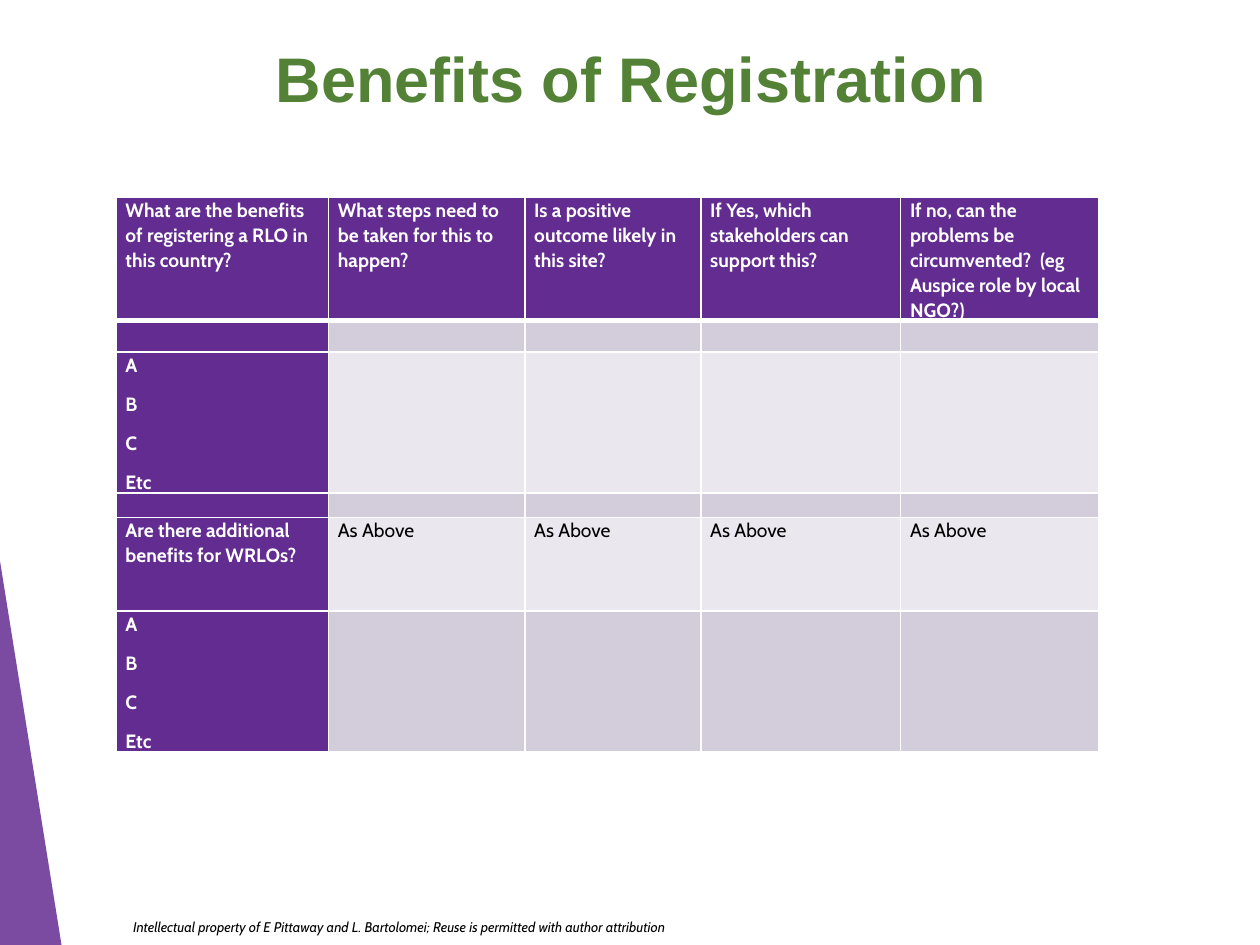
import pptx
import pptx.dml.color
import pptx.enum.text
import pptx.oxml
import pptx.oxml.ns
import pptx.util
import lxml.etree

Pt = pptx.util.Pt
ALIGN = pptx.enum.text.PP_ALIGN
ANCHOR = pptx.enum.text.MSO_ANCHOR
COLORS = {
    "purple": "632C90",
    "green": "538135",
    "band_dark": "D3CDDB",
    "band_light": "EAE8EE",
    "white": "FFFFFF",
    "black": "000000",
}


def rgb(name):
    return pptx.dml.color.RGBColor.from_string(COLORS[name])


def add_child(parent, tag, **attributes):
    return lxml.etree.SubElement(parent, pptx.oxml.ns.qn(tag), attributes)


class SlideBuilder:
    body_font = "Cabin"
    title_font = "Arial"
    table_size = 11

    def __init__(self, slide):
        self.slide = slide

    def style(self, para, font, size, color, bold=False, italic=False):
        para.font.name = font
        para.font.size = Pt(size)
        para.font.color.rgb = rgb(color)
        para.font.bold = bold
        para.font.italic = italic

    def text(self, left, top, width, height, words, align, anchor, **look):
        box = self.slide.shapes.add_textbox(Pt(left), Pt(top), Pt(width), Pt(height))
        frame = box.text_frame
        frame.word_wrap = True
        frame.vertical_anchor = anchor
        para = frame.paragraphs[0]
        para.text = words
        para.alignment = align
        self.style(para, **look)

    def polygon(self, points, color, opacity):
        corners = [(Pt(x), Pt(y)) for x, y in points]
        builder = self.slide.shapes.build_freeform(*corners[0], scale=1.0)
        builder.add_line_segments(corners[1:], close=True)
        shape = builder.convert_to_shape()
        shape.shadow.inherit = False
        shape.line.fill.background()
        shape.fill.solid()
        shape.fill.fore_color.rgb = rgb(color)
        fill_color = shape._element.spPr.find(".//" + pptx.oxml.ns.qn("a:srgbClr"))
        add_child(fill_color, "a:alpha", val=str(opacity * 1000))

    def borders(self, cell, bottom):
        properties = cell._tc.get_or_add_tcPr()
        widths = {"a:lnL": 1, "a:lnR": 1, "a:lnT": 1, "a:lnB": bottom}
        for tag, width in widths.items():
            line = add_child(properties, tag, w=str(Pt(width)))
            add_child(add_child(line, "a:solidFill"), "a:srgbClr", val=COLORS["white"])

    def cell(self, cell, lines, fill, color, bold, bottom):
        cell.margin_left = cell.margin_right = Pt(5.4)
        cell.margin_top = cell.margin_bottom = 0
        self.borders(cell, bottom)
        cell.fill.solid()
        cell.fill.fore_color.rgb = rgb(fill)
        cell.text = "\n".join(lines)
        for para in cell.text_frame.paragraphs:
            para.line_spacing = 1.07
            para.space_after = Pt(8)
            self.style(para, self.body_font, self.table_size, color, bold)
            if not para.text:  # keeps empty rows as low as a table line
                add_child(para._p, "a:endParaRPr", sz=str(self.table_size * 100))

    def table(self, left, top, widths, heights, rows, bands):
        frame = self.slide.shapes.add_table(
            len(heights), len(widths), Pt(left), Pt(top), Pt(sum(widths)), Pt(sum(heights)))
        table = frame.table
        table.first_row = table.horz_banding = False
        for column, width in zip(table.columns, widths):
            column.width = Pt(width)
        for row, height in zip(table.rows, heights):
            row.height = Pt(height)
        for r, (row, band) in enumerate(zip(rows, bands)):
            for c, lines in enumerate(row):
                heading = r == 0 or c == 0
                self.cell(
                    table.cell(r, c), lines,
                    fill="purple" if heading else band,
                    color="white" if heading else "black",
                    bold=heading, bottom=3 if r == 0 else 1)


def main():
    deck = pptx.Presentation()
    deck.slide_width, deck.slide_height = Pt(720), Pt(540)
    page = SlideBuilder(deck.slides.add_slide(deck.slide_layouts[6]))

    # Corner wedge and footer
    page.polygon([(-0.7, 316), (35.3, 540.7), (-0.7, 540)], "purple", 85)
    page.text(69, 521.3, 417.6, 16.6,
              "Intellectual property of E Pittaway and L. Bartolomei; "
              "Reuse is permitted with author attribution",
              ALIGN.LEFT, ANCHOR.TOP,
              font=page.body_font, size=8, color="black", italic=True)

    # Title
    page.text(54, 19.4, 613.4, 49.7, "Benefits of Registration",
              ALIGN.CENTER, ANCHOR.MIDDLE,
              font=page.title_font, size=36, color="green", bold=True)

    # Question table: each cell is a list of lines
    questions = [
        "What are the benefits of registering a RLO in this country?",
        "What steps need to be taken for this to happen?",
        "Is a positive outcome likely in this site?",
        "If Yes, which stakeholders can support this?",
        "If no, can the problems be circumvented?  (eg Auspice role by local NGO?)",
    ]
    blank = [[]] * 4
    answers = [["A", "B", "C", "Etc"]] + blank
    rows = [
        [[question] for question in questions],
        [[]] + blank,
        answers,
        [[]] + blank,
        [["Are there additional benefits for WRLOs?"]] + [["As Above"]] * 4,
        answers,
    ]
    bands = ["purple"] + ["band_dark", "band_light"] * 2 + ["band_dark"]
    page.table(66.3, 112.6, [121.4, 112.2, 100.6, 114.2, 113],
               [70, 18, 80, 14, 53.5, 80], rows, bands)

    deck.save("out.pptx")


if __name__ == "__main__":
    main()
